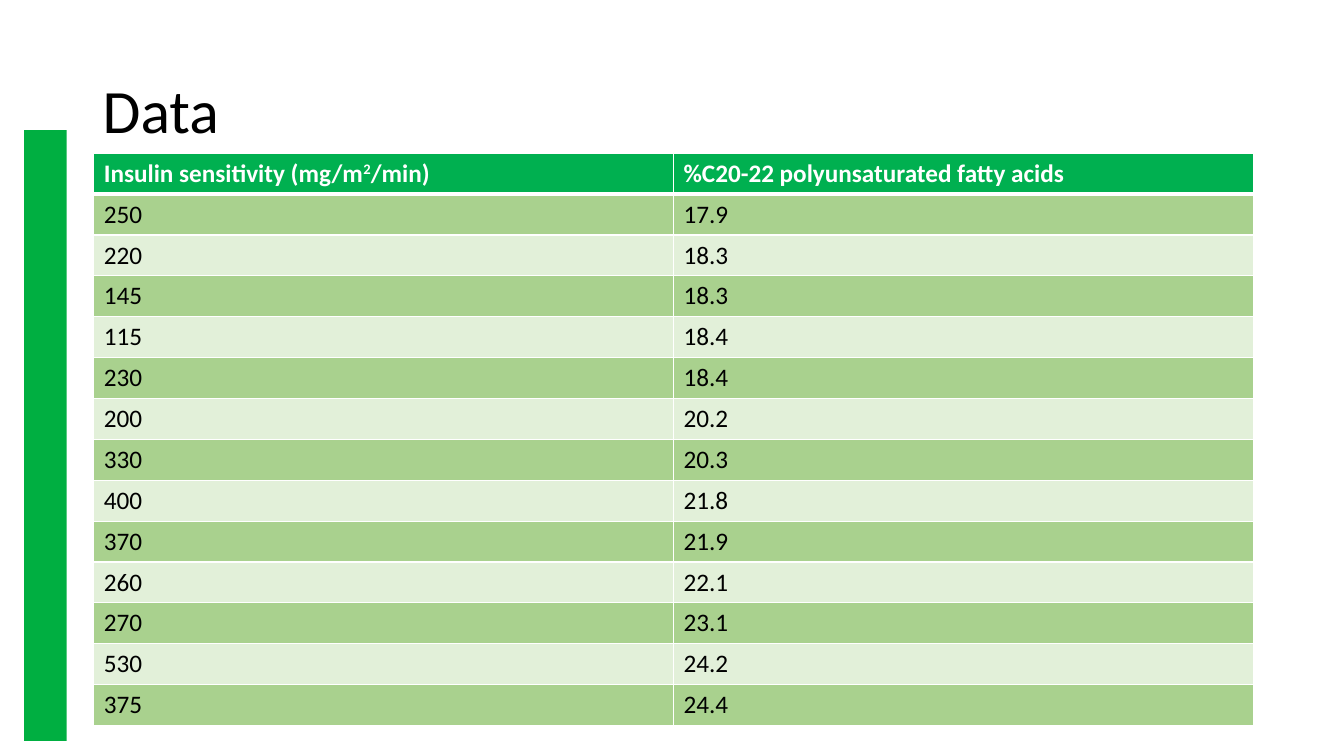
from dataclasses import dataclass

from pptx import Presentation
from pptx.dml.color import RGBColor as Color
from pptx.enum.shapes import MSO_SHAPE as Shape
from pptx.enum.text import MSO_ANCHOR as Anchor
from pptx.oxml import parse_xml
from pptx.oxml.ns import nsdecls
from pptx.util import Inches, Pt


@dataclass(frozen=True)
class Theme:
    font: str = "Calibri"
    title_size: int = 44
    table_size: int = 18
    text: str = "000000"
    white: str = "FFFFFF"
    bar: str = "00AF41"
    header: str = "00B050"
    bands: tuple = ("A9D18E", "E2F0D9")
    thin_line: int = 1
    header_line: int = 3


THEME = Theme()

HEADERS = (
    (("Insulin sensitivity (mg/m", False), ("2", True), ("/min)", False)),
    (("%C20-22 polyunsaturated fatty acids", False),),
)

MEASUREMENTS = (
    ("250", "17.9"),
    ("220", "18.3"),
    ("145", "18.3"),
    ("115", "18.4"),
    ("230", "18.4"),
    ("200", "20.2"),
    ("330", "20.3"),
    ("400", "21.8"),
    ("370", "21.9"),
    ("260", "22.1"),
    ("270", "23.1"),
    ("530", "24.2"),
    ("375", "24.4"),
)


def add_run(para, text, size, color, bold=False, superscript=False):
    run = para.add_run()
    run.text = text
    run.font.name = THEME.font
    run.font.size = Pt(size)
    run.font.bold = bold
    run.font.color.rgb = Color.from_string(color)
    if superscript:
        run._r.get_or_add_rPr().set("baseline", "30000")


def add_bar(page, left, top, width, height):
    bar = page.shapes.add_shape(
        Shape.RECTANGLE, Inches(left), Inches(top), Inches(width), Inches(height)
    )
    bar.shadow.inherit = False
    bar.fill.solid()
    bar.fill.fore_color.rgb = Color.from_string(THEME.bar)
    bar.line.fill.background()


def add_title(page, text, left, top, width, height):
    box = page.shapes.add_textbox(
        Inches(left), Inches(top), Inches(width), Inches(height)
    )
    frame = box.text_frame
    frame.word_wrap = True
    frame.vertical_anchor = Anchor.MIDDLE
    para = frame.paragraphs[0]
    para.line_spacing = 0.9
    add_run(para, text, THEME.title_size, THEME.text)


def set_borders(cell, top, bottom):
    properties = cell._tc.get_or_add_tcPr()
    widths = {"L": THEME.thin_line, "R": THEME.thin_line, "T": top, "B": bottom}
    for side, width in widths.items():
        properties.append(parse_xml(
            f'<a:ln{side} {nsdecls("a")} w="{Pt(width)}"><a:solidFill>'
            f'<a:srgbClr val="{THEME.white}"/></a:solidFill></a:ln{side}>'
        ))


def fill_cell(cell, parts, row):
    is_header = row == 0
    set_borders(
        cell,
        top=THEME.header_line if row == 1 else THEME.thin_line,
        bottom=THEME.header_line if is_header else THEME.thin_line,
    )
    cell.fill.solid()
    fill = THEME.header if is_header else THEME.bands[(row - 1) % 2]
    cell.fill.fore_color.rgb = Color.from_string(fill)
    color = THEME.white if is_header else THEME.text
    para = cell.text_frame.paragraphs[0]
    for text, superscript in parts:
        add_run(para, text, THEME.table_size, color, is_header, superscript)


def add_data_table(page, left, top, width, height):
    rows = [HEADERS]
    rows += [[((value, False),) for value in pair] for pair in MEASUREMENTS]
    table = page.shapes.add_table(
        len(rows), len(HEADERS),
        Inches(left), Inches(top), Inches(width), Inches(height),
    ).table
    for row, cells in enumerate(rows):
        for column, parts in enumerate(cells):
            fill_cell(table.cell(row, column), parts, row)


def main():
    deck = Presentation()
    deck.slide_width = Inches(13.33)
    deck.slide_height = Inches(7.5)
    page = deck.slides.add_slide(deck.slide_layouts[6])
    add_bar(page, 0.24, 1.29, 0.42, 6.06)
    add_title(page, "Data", 0.92, 0.4, 11.5, 1.45)
    add_data_table(page, 0.93, 1.52, 11.5, 5.68)
    deck.save("out.pptx")


if __name__ == "__main__":
    main()
